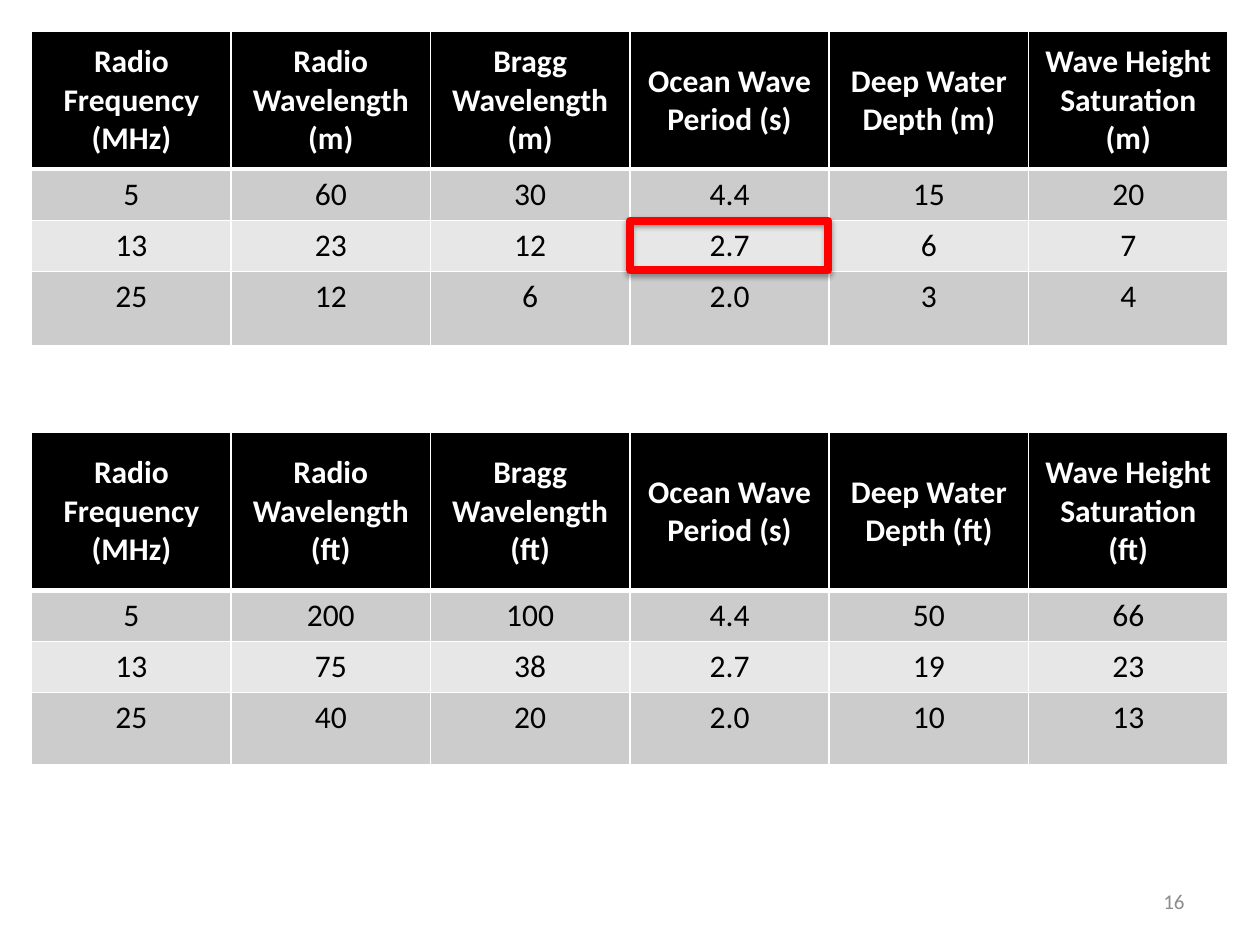
"""Build a slide of radio and ocean wave tables in metric and imperial units."""

from dataclasses import dataclass

from lxml import etree
from pptx import Presentation
from pptx.dml.color import RGBColor
from pptx.enum.shapes import MSO_SHAPE
from pptx.enum.text import MSO_ANCHOR, PP_ALIGN
from pptx.oxml.ns import qn
from pptx.util import Cm, Pt

RECTANGLE = MSO_SHAPE.RECTANGLE
TOP, MIDDLE = MSO_ANCHOR.TOP, MSO_ANCHOR.MIDDLE
CENTER, RIGHT = PP_ALIGN.CENTER, PP_ALIGN.RIGHT
BLANK_LAYOUT = 6
FONT_NAME = "Calibri"
TABLE_LEFT, COLUMN_WIDTH = 0.64, 4.02
BAND_FILLS = ("CCCCCC", "E7E7E7")
HEADINGS = (
    "Radio Frequency (MHz)",
    "Radio Wavelength ({unit})",
    "Bragg Wavelength ({unit})",
    "Ocean Wave Period (s)",
    "Deep Water Depth ({unit})",
    "Wave Height Saturation ({unit})",
)


@dataclass(frozen=True)
class WaveTable:
    """Hold one table, with lengths in centimetres."""

    unit: str
    top: float
    row_heights: tuple
    rows: tuple


WAVE_TABLES = (
    WaveTable("m", 0.64, (2.77, 1.03, 1.03, 1.5), (
        ("5", "60", "30", "4.4", "15", "20"),
        ("13", "23", "12", "2.7", "6", "7"),
        ("25", "12", "6", "2.0", "3", "4"),
    )),
    WaveTable("ft", 8.72, (3.18, 1.03, 1.03, 1.45), (
        ("5", "200", "100", "4.4", "50", "66"),
        ("13", "75", "38", "2.7", "19", "23"),
        ("25", "40", "20", "2.0", "10", "13"),
    )),
)


def color(value: str) -> RGBColor:
    """Turn a hex string into a colour."""
    return RGBColor.from_string(value)


def write(text_frame, text: str, alignment, text_color: str, size: float, bold: bool = False) -> None:
    """Fill a text frame with one formatted paragraph."""
    paragraph = text_frame.paragraphs[0]
    paragraph.text = text
    paragraph.alignment = alignment
    font = paragraph.runs[0].font
    for name, value in {"name": FONT_NAME, "size": Pt(size), "bold": bold}.items():
        setattr(font, name, value)
    font.color.rgb = color(text_color)


def add_borders(cell, widths: dict) -> None:
    """Give a cell white borders of the given widths in points."""
    properties = cell._tc.get_or_add_tcPr()
    for side, width in widths.items():
        line = etree.SubElement(properties, qn(f"a:ln{side}"), w=str(Pt(width)))
        fill = etree.SubElement(line, qn("a:solidFill"))
        etree.SubElement(fill, qn("a:srgbClr"), val="FFFFFF")


def add_wave_table(slide, wave_table: WaveTable) -> None:
    """Draw a table with a black header and banded rows."""
    headings = tuple(heading.format(unit=wave_table.unit) for heading in HEADINGS)
    rows = (headings, *wave_table.rows)
    table = slide.shapes.add_table(
        len(rows), len(headings), Cm(TABLE_LEFT), Cm(wave_table.top),
        Cm(COLUMN_WIDTH * len(headings)), Cm(sum(wave_table.row_heights)),
    ).table
    for column in table.columns:
        column.width = Cm(COLUMN_WIDTH)
    for row_index, (row, height) in enumerate(zip(rows, wave_table.row_heights)):
        table.rows[row_index].height = Cm(height)
        is_header = row_index == 0
        fill_color = "000000" if is_header else BAND_FILLS[(row_index - 1) % 2]
        widths = {
            "L": 1, "R": 1,
            "T": 3 if row_index == 1 else 1,
            "B": 3 if is_header else 1,
        }
        for column_index, text in enumerate(row):
            cell = table.cell(row_index, column_index)
            cell.vertical_anchor = MIDDLE if is_header else TOP
            add_borders(cell, widths)
            cell.fill.solid()
            cell.fill.fore_color.rgb = color(fill_color)
            text_color = "FFFFFF" if is_header else "000000"
            write(cell.text_frame, text, CENTER, text_color, 18, is_header)


def add_highlight(slide) -> None:
    """Frame the 13 MHz wave period in red with a soft shadow."""
    shape = slide.shapes.add_shape(RECTANGLE, Cm(12.7), Cm(4.45), Cm(4), Cm(1))
    shape.fill.background()
    shape.line.color.rgb = color("FF0000")
    shape.line.width = Pt(4.5)
    shape.shadow.inherit = False
    effects = shape._element.spPr.find(qn("a:effectLst"))
    shadow = etree.SubElement(
        effects, qn("a:outerShdw"), blurRad=str(Pt(3.1)), dist=str(Pt(1.8)),
        dir="5400000", rotWithShape="0",
    )
    shadow_color = etree.SubElement(shadow, qn("a:srgbClr"), val="000000")
    etree.SubElement(shadow_color, qn("a:alpha"), val="35000")


def add_page_number(slide) -> None:
    """Write the page number at the lower right."""
    text_frame = slide.shapes.add_textbox(Cm(18.2), Cm(17.66), Cm(5.93), Cm(1.01)).text_frame
    text_frame.word_wrap = True
    text_frame.vertical_anchor = MIDDLE
    write(text_frame, "16", RIGHT, "8C8C8C", 12)


def main() -> None:
    """Build and save the presentation."""
    presentation = Presentation()
    presentation.slide_width, presentation.slide_height = Cm(25.4), Cm(19.05)
    slide = presentation.slides.add_slide(presentation.slide_layouts[BLANK_LAYOUT])
    for wave_table in WAVE_TABLES:
        add_wave_table(slide, wave_table)
    add_page_number(slide)
    add_highlight(slide)
    presentation.save("out.pptx")


if __name__ == "__main__":
    main()
